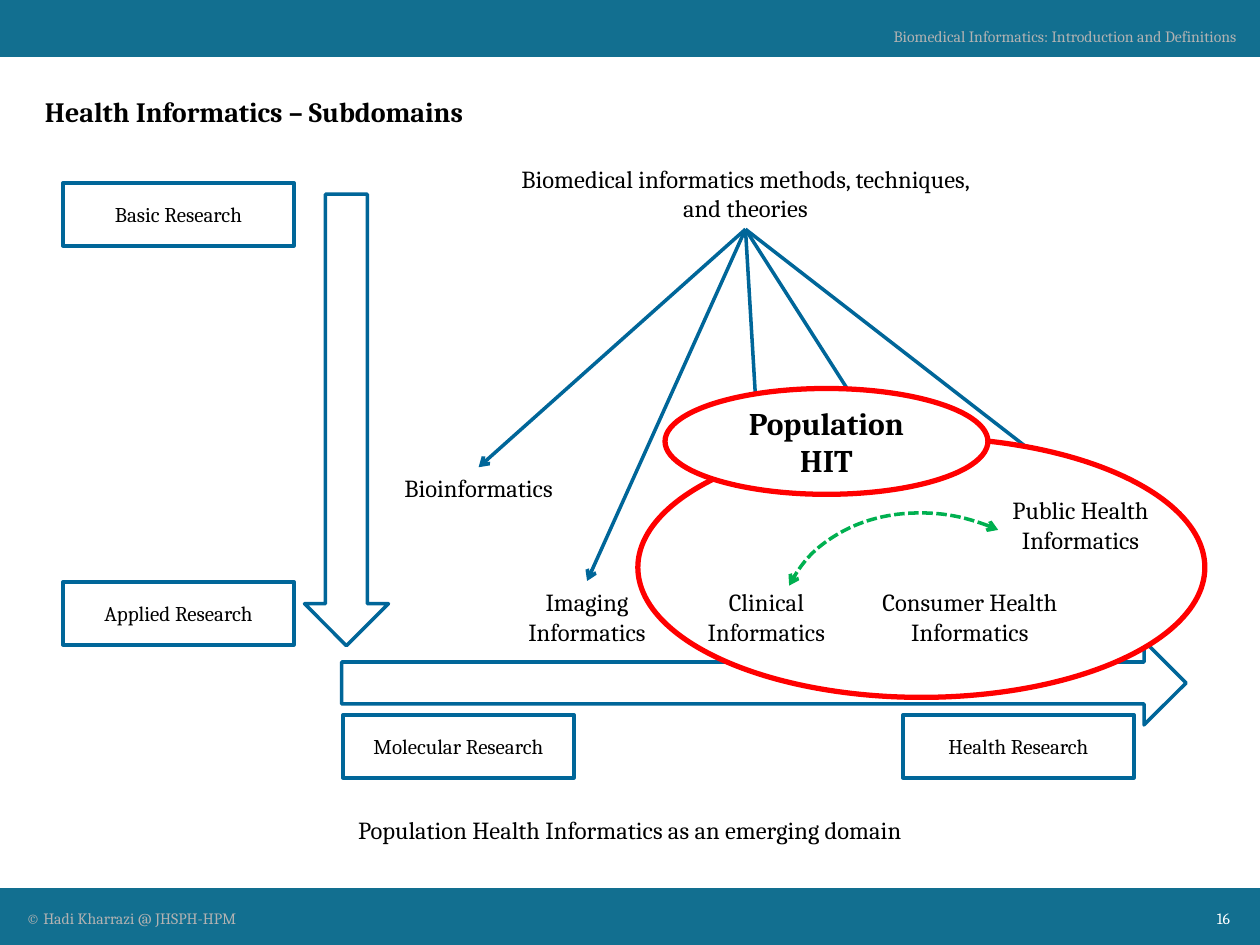
"""Build the slide on the subdomains of health informatics."""
from lxml import etree
from pptx import Presentation
from pptx.dml.color import RGBColor
from pptx.enum.dml import MSO_LINE
from pptx.enum.shapes import MSO_CONNECTOR, MSO_SHAPE
from pptx.enum.text import MSO_ANCHOR, MSO_AUTO_SIZE, PP_ALIGN
from pptx.oxml.ns import qn
from pptx.util import Pt

RECTANGLE, ELLIPSE = MSO_SHAPE.RECTANGLE, MSO_SHAPE.OVAL
DOWN_ARROW, ARC = MSO_SHAPE.DOWN_ARROW, MSO_SHAPE.ARC
STRAIGHT, DASH = MSO_CONNECTOR.STRAIGHT, MSO_LINE.SQUARE_DOT
LEFT, CENTER, RIGHT = PP_ALIGN.LEFT, PP_ALIGN.CENTER, PP_ALIGN.RIGHT
TOP, MIDDLE = MSO_ANCHOR.TOP, MSO_ANCHOR.MIDDLE
NO_AUTOFIT = MSO_AUTO_SIZE.NONE
TOP_SIDE, BOTTOM_SIDE = 0, 2

BAND, BLUE, RED, GREEN = "126F90", "006699", "FF0000", "00B050"
WHITE, BLACK, GRAY = "FFFFFF", "000000", "B2B2B2"


def color(value):
    return RGBColor.from_string(value)


def set_attributes(target, values):
    for name, value in values.items():
        setattr(target, name, value)


class SlideBuilder:
    font_name = "Cambria"

    def __init__(self, slide):
        self.slide = slide

    def set_text(self, shape, text, size, text_color=BLACK, bold=False,
                 align=CENTER, anchor=MIDDLE, wrap=True):
        frame = shape.text_frame
        frame.text = text
        set_attributes(frame, {"auto_size": NO_AUTOFIT, "word_wrap": wrap,
                               "vertical_anchor": anchor})
        for paragraph in frame.paragraphs:
            paragraph.alignment = align
            for run in paragraph.runs:
                set_attributes(run.font, {"name": self.font_name, "size": Pt(size),
                                          "bold": bold})
                run.font.color.rgb = color(text_color)

    def title(self, text, box):
        title = self.slide.shapes.title
        set_attributes(title, dict(zip(("left", "top", "width", "height"), map(Pt, box))))
        self.set_text(title, text, 16, bold=True, align=LEFT)

    def text(self, text, box, size=14, **style):
        shape = self.slide.shapes.add_textbox(*map(Pt, box))
        self.set_text(shape, text, size, anchor=TOP, **style)
        return shape

    def shape(self, kind, box, fill=WHITE, line=BLUE, width=2, rotation=0):
        shape = self.slide.shapes.add_shape(kind, *map(Pt, box))
        shape.shadow.inherit = False
        shape.rotation = rotation
        if fill:
            shape.fill.solid()
            shape.fill.fore_color.rgb = color(fill)
        else:
            shape.fill.background()
        if line:
            self.outline(shape, line, width)
        else:
            shape.line.fill.background()
        return shape

    def outline(self, shape, line, width):
        shape.line.color.rgb = color(line)
        shape.line.width = Pt(width)

    def arrowheads(self, shape, *ends):
        line = shape._element.spPr.find(qn("a:ln"))
        for end in ends:
            etree.SubElement(line, qn(f"a:{end}"), type="arrow")

    def arrow(self):
        connector = self.slide.shapes.add_connector(STRAIGHT, 0, 0, 0, 0)
        self.outline(connector, BLUE, 2)
        self.arrowheads(connector, "tailEnd")
        etree.SubElement(connector._element.spPr, qn("a:effectLst"))
        return connector

    def research_box(self, text, left, top):
        self.set_text(self.shape(RECTANGLE, (left, top, 132, 36)), text, 12)

    def dashed_arc(self, box, rotation, angles):
        arc = self.shape(ARC, box, None, GREEN, 2, rotation)
        for index, angle in enumerate(angles):
            arc.adjustments[index] = angle
        arc._element.spPr.find(qn("a:xfrm")).set("flipV", "1")
        arc.line.dash_style = DASH
        self.arrowheads(arc, "headEnd", "tailEnd")


def main():
    presentation = Presentation()
    presentation.slide_width, presentation.slide_height = Pt(720), Pt(540)
    builder = SlideBuilder(presentation.slides.add_slide(presentation.slide_layouts[5]))

    for top in (0, 507.5):
        builder.shape(RECTANGLE, (0, top, 720, 32.5), BAND, None)
    builder.text("© Hadi Kharrazi @ JHSPH-HPM", (8, 515.5, 447, 18), 9,
                 text_color=GRAY, align=LEFT)
    builder.text("Biomedical Informatics: Introduction and Definitions",
                 (484, 12, 229.5, 18), 9, text_color=GRAY, align=RIGHT, wrap=False)
    builder.text("16", (663, 515.5, 47, 18), 9, text_color=WHITE, align=RIGHT)
    builder.title("Health Informatics – Subdomains", (18.5, 47, 692, 33))

    builder.shape(DOWN_ARROW, (412.5, 149, 48, 482.5), rotation=270)
    builder.shape(DOWN_ARROW, (174, 111, 48, 258))
    for text, left, top in (("Basic Research", 36, 104.5),
                            ("Applied Research", 36, 332.5),
                            ("Molecular Research", 196, 408.5),
                            ("Health Research", 516, 408.5)):
        builder.research_box(text, left, top)

    subdomains = (("Bioinformatics", (220, 267, 107, 24.5)),
                  ("Imaging\nInformatics", (291.5, 332, 88, 41)),
                  ("Clinical\nInformatics", (394, 332, 88, 41)),
                  ("Public Health\nInformatics", (567.5, 279.5, 100, 41)),
                  ("Consumer Health\nInformatics", (492, 332, 124.5, 41)))
    arrows = [builder.arrow() for _ in subdomains]
    builder.shape(ELLIPSE, (364.5, 250, 324, 148.5), line=RED, width=3)
    methods = builder.text("Biomedical informatics methods, techniques, and theories",
                           (288, 90, 276, 41))
    for arrow, (text, box) in zip(arrows, subdomains):
        label = builder.text(text, box, wrap=False)
        arrow.begin_connect(methods, BOTTOM_SIDE)
        arrow.end_connect(label, TOP_SIDE)

    builder.dashed_arc((441.5, 296, 193, 160.5), 203.8, (162, 214.97))
    population = builder.shape(ELLIPSE, (380, 222, 184.5, 60.5), line=RED, width=3)
    builder.set_text(population, "Population\vHIT", 18, bold=True)
    builder.text("Population Health Informatics as an emerging domain",
                 (183, 462, 354, 24.5), wrap=False)

    presentation.save("out.pptx")


if __name__ == "__main__":
    main()
